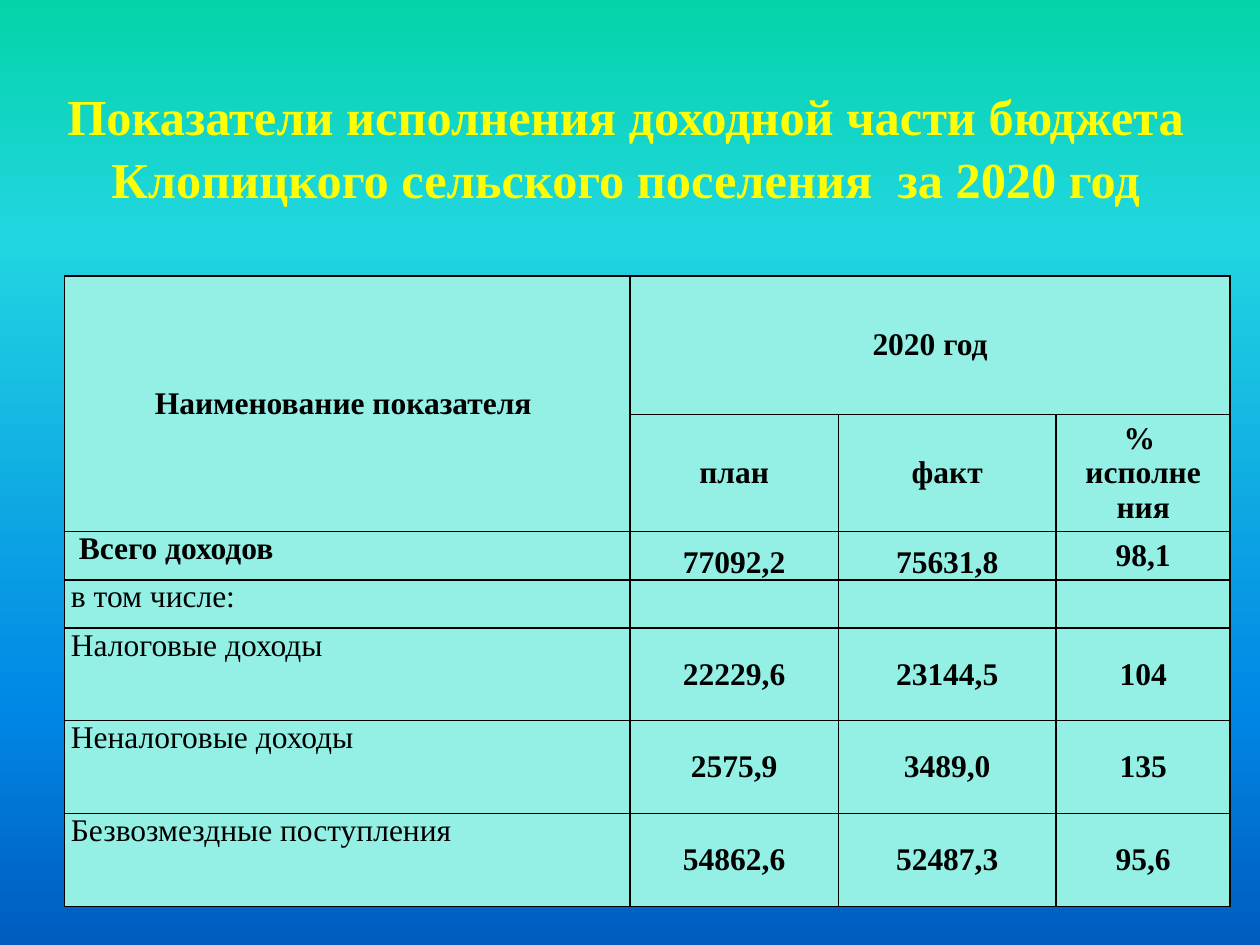
from dataclasses import dataclass

from lxml import etree
from pptx import Presentation
from pptx.dml.color import RGBColor
from pptx.enum import text
from pptx.oxml import ns
from pptx.slide import Slide
from pptx.table import Table, _Cell
from pptx.util import Cm, Pt


@dataclass(frozen=True)
class Theme:
    font: str = "Times New Roman"
    title_size: float = 28.8
    table_size: float = 18
    title_color: str = "FFFF00"
    text_color: str = "000000"
    cell_color: str = "94F0E4"
    border_color: str = "000000"
    border_width: float = 1
    background: tuple = ((0, "03D4A8"), (25, "21D6E0"), (75, "0087E6"), (100, "005CBF"))


@dataclass(frozen=True)
class Indicator:
    name: str
    values: tuple[str, str, str] = ("", "", "")
    total: bool = False


THEME = Theme()
TITLE = "Показатели исполнения доходной части бюджета Клопицкого сельского поселения  за 2020 год"
COLUMN_WIDTHS = (11.4, 4.2, 4.39, 3.51)
ROW_HEIGHTS = (2.8, 2.36, 0.97, 0.97, 1.87, 1.87, 1.87)
SUBHEADINGS = ("план", "факт", "%  исполне ния")
INDICATORS = (
    Indicator(" Всего доходов", ("77092,2", "75631,8", "98,1"), total=True),
    Indicator("в том числе:"),
    Indicator("Налоговые доходы", ("22229,6", "23144,5", "104")),
    Indicator("Неналоговые доходы", ("2575,9", "3489,0", "135")),
    Indicator("Безвозмездные поступления", ("54862,6", "52487,3", "95,6")),
)


def add_element(parent, tag: str, **attributes: str):
    return etree.SubElement(parent, ns.qn(tag), **attributes)


def paint_background(slide: Slide) -> None:
    fill = slide.background.fill
    fill.gradient()
    gradient = slide.element.find(".//" + ns.qn("a:gradFill"))
    stops = gradient.find(ns.qn("a:gsLst"))
    for stop in list(stops):
        stops.remove(stop)
    for position, color in THEME.background:
        stop = add_element(stops, "a:gs", pos=str(position * 1000))
        add_element(stop, "a:srgbClr", val=color)
    gradient.find(ns.qn("a:lin")).set("ang", "5400000")


def format_paragraph(paragraph, size: float, color: str, bold: bool, align) -> None:
    paragraph.alignment = align
    for run in paragraph.runs:
        run.font.name = THEME.font
        run.font.size = Pt(size)
        run.font.bold = bold
        run.font.color.rgb = RGBColor.from_string(color)


def add_title(slide: Slide) -> None:
    title = slide.shapes.title
    title.left, title.top, title.width, title.height = Cm(0.41), Cm(0.58), Cm(24.41), Cm(3.76)
    frame = title.text_frame
    frame.text = TITLE
    frame.word_wrap = True
    frame.auto_size = text.MSO_AUTO_SIZE.NONE
    frame.vertical_anchor = text.MSO_ANCHOR.BOTTOM
    paragraph = frame.paragraphs[0]
    paragraph.line_spacing = 1.05
    format_paragraph(paragraph, THEME.title_size, THEME.title_color, True, text.PP_ALIGN.CENTER)


def style_cell(cell: _Cell) -> None:
    cell.margin_left = cell.margin_right = Cm(0.13)
    cell.margin_top = cell.margin_bottom = 0
    properties = cell._tc.get_or_add_tcPr()
    for side in ("a:lnL", "a:lnR", "a:lnT", "a:lnB"):
        line = add_element(properties, side, w=str(Pt(THEME.border_width)))
        add_element(add_element(line, "a:solidFill"), "a:srgbClr", val=THEME.border_color)
    cell.fill.solid()
    cell.fill.fore_color.rgb = RGBColor.from_string(THEME.cell_color)


def write_cell(
    cell: _Cell,
    content: str,
    bold: bool = True,
    align=text.PP_ALIGN.CENTER,
    anchor=text.MSO_ANCHOR.MIDDLE,
) -> None:
    cell.text_frame.text = content
    cell.vertical_anchor = anchor
    format_paragraph(cell.text_frame.paragraphs[0], THEME.table_size, THEME.text_color, bold, align)


def write_indicator(table: Table, row: int, indicator: Indicator) -> None:
    write_cell(
        table.cell(row, 0), indicator.name, indicator.total, text.PP_ALIGN.LEFT, text.MSO_ANCHOR.TOP
    )
    for column, value in enumerate(indicator.values, start=1):
        at_bottom = indicator.total and column < 3
        anchor = text.MSO_ANCHOR.BOTTOM if at_bottom else text.MSO_ANCHOR.MIDDLE
        write_cell(table.cell(row, column), value, anchor=anchor)


def add_indicator_table(slide: Slide) -> None:
    table = slide.shapes.add_table(
        len(ROW_HEIGHTS), len(COLUMN_WIDTHS), Cm(1.3), Cm(5.56),
        Cm(sum(COLUMN_WIDTHS)), Cm(sum(ROW_HEIGHTS)),
    ).table
    table.first_row = table.horz_banding = False
    for column, width in zip(table.columns, COLUMN_WIDTHS):
        column.width = Cm(width)
    for row, height in zip(table.rows, ROW_HEIGHTS):
        row.height = Cm(height)
    for cell in table.iter_cells():
        style_cell(cell)
    table.cell(0, 0).merge(table.cell(1, 0))
    table.cell(0, 1).merge(table.cell(0, 3))
    write_cell(table.cell(0, 0), "Наименование показателя ")
    write_cell(table.cell(0, 1), "2020 год")
    for column, heading in enumerate(SUBHEADINGS, start=1):
        write_cell(table.cell(1, column), heading)
    for row, indicator in enumerate(INDICATORS, start=2):
        write_indicator(table, row, indicator)


def main() -> None:
    presentation = Presentation()
    presentation.slide_width, presentation.slide_height = Cm(25.4), Cm(19.05)
    slide = presentation.slides.add_slide(presentation.slide_layouts[5])
    paint_background(slide)
    add_title(slide)
    add_indicator_table(slide)
    presentation.save("out.pptx")


if __name__ == "__main__":
    main()
